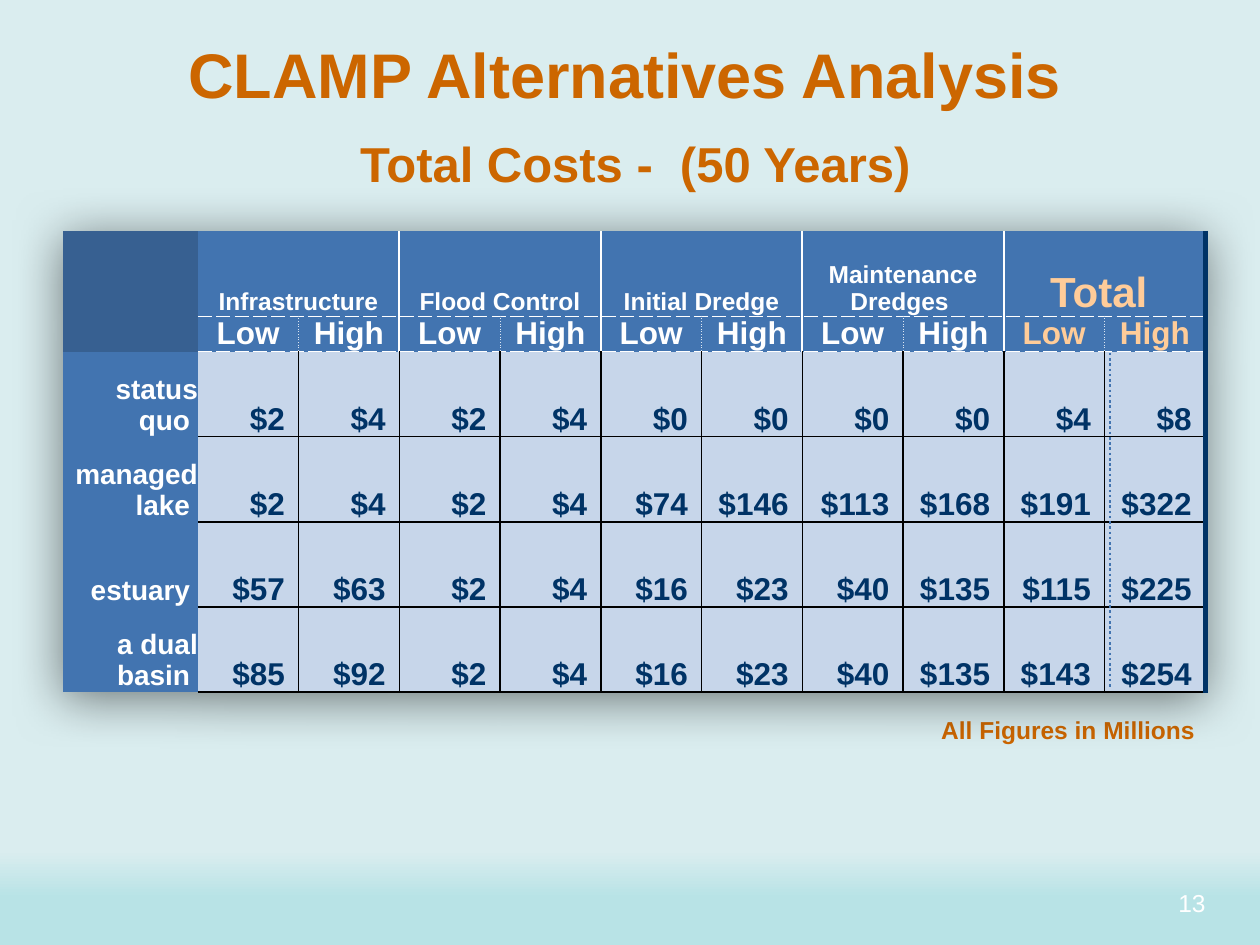
from lxml import etree
from pptx import Presentation, util as u
from pptx.dml.color import RGBColor
from pptx.enum import dml, shapes, text
from pptx.oxml.ns import qn

ORANGE = RGBColor(0xCC, 0x66, 0x00)
PEACH = RGBColor(0xFF, 0xCC, 0x99)
WHITE = RGBColor(0xFF, 0xFF, 0xFF)
BLACK = RGBColor(0, 0, 0)
NAVY = RGBColor(0x00, 0x33, 0x66)
BLUE = RGBColor(0x42, 0x74, 0xB0)
DARK_BLUE = RGBColor(0x37, 0x60, 0x91)
PALE_BLUE = RGBColor(0xC7, 0xD6, 0xEA)
MIST = RGBColor(0xDB, 0xE5, 0xF1)
AQUA = RGBColor(0xB8, 0xE3, 0xE6)
SKY = RGBColor(0xDA, 0xED, 0xEF)

CENTER, RIGHT = text.PP_ALIGN.CENTER, text.PP_ALIGN.RIGHT
TOP, MIDDLE, BOTTOM = (text.MSO_ANCHOR.TOP, text.MSO_ANCHOR.MIDDLE,
                       text.MSO_ANCHOR.BOTTOM)
NO_GRID_STYLE = "{2D5ABB26-0587-4C30-8999-92F81FD0307C}"

GROUPS = ["Infrastructure", "Flood Control", "Initial Dredge",
          "Maintenance Dredges ", "Total "]
COSTS = {
    "status quo ": [2, 4, 2, 4, 0, 0, 0, 0, 4, 8],
    "managed lake ": [2, 4, 2, 4, 74, 146, 113, 168, 191, 322],
    "estuary ": [57, 63, 2, 4, 16, 23, 40, 135, 115, 225],
    "a dual basin ": [85, 92, 2, 4, 16, 23, 40, 135, 143, 254],
}
WHITE_RULE = (WHITE, 1.5, "solid")
DASHED = (WHITE, 0.5, "dash")
DOTTED = (MIST, 0.5, "dot")
BLACK_RULE = (BLACK, 1, "solid")


def grid(n):
    """Length of n grid units; the slide is 120 columns by 90 rows."""
    return u.Inches(n / 12)


class Deck:
    font = "Arial"

    def __init__(self):
        self.prs = Presentation()
        self.prs.slide_width, self.prs.slide_height = grid(120), grid(90)
        self.s = self.prs.slides.add_slide(self.prs.slide_layouts[5])

    def background(self, angle, *stops):
        fill = self.s.background.fill
        fill.gradient()
        fill.gradient_angle = angle
        for stop, (position, color) in zip(fill.gradient_stops, stops):
            stop.position = position
            stop.color.rgb = color

    def add_text(self, tf, words, size, color, align, bold=True):
        p = tf.paragraphs[0]
        p.alignment = align
        r = p.add_run()
        r.text = words
        r.font.name, r.font.size, r.font.bold = self.font, u.Pt(size), bold
        r.font.color.rgb = color

    def place(self, sp, box, anchor):
        sp.left, sp.top, sp.width, sp.height = map(grid, box)
        sp.text_frame.word_wrap = True
        sp.text_frame.auto_size = text.MSO_AUTO_SIZE.NONE
        sp.text_frame.vertical_anchor = anchor

    def title(self, box, *style):
        sp = self.s.shapes.title
        self.place(sp, box, MIDDLE)
        self.add_text(sp.text_frame, *style)

    def label(self, box, *style, anchor=MIDDLE, bold=True):
        sp = self.s.shapes.add_textbox(0, 0, 0, 0)
        self.place(sp, box, anchor)
        self.add_text(sp.text_frame, *style, bold=bold)

    def line(self, x, top, bottom, color, width, dash=None):
        ln = self.s.shapes.add_connector(
            shapes.MSO_CONNECTOR.STRAIGHT, *map(grid, (x, top, x, bottom)))
        ln.line.color.rgb, ln.line.width = color, u.Pt(width)
        if dash:
            ln.line.dash_style = dash
        etree.SubElement(ln._element.spPr, qn("a:effectLst"))

    def table(self, left, top, widths, heights):
        frame = self.s.shapes.add_table(
            len(heights), len(widths),
            *map(grid, (left, top, sum(widths), sum(heights))))
        tbl = frame.table
        tbl.first_row = tbl.horz_banding = False
        for col, width in zip(tbl.columns, widths):
            col.width = grid(width)
        for row, height in zip(tbl.rows, heights):
            row.height = grid(height)
        props = tbl._tbl.tblPr
        props.find(qn("a:tableStyleId")).text = NO_GRID_STYLE
        effects = etree.Element(qn("a:effectLst"))
        shadow = etree.SubElement(
            effects, qn("a:outerShdw"), blurRad=str(u.Inches(0.4)),
            dist=str(u.Inches(0.06)), dir="5400000", algn="ctr", rotWithShape="0")
        color = etree.SubElement(shadow, qn("a:srgbClr"), val=str(BLACK))
        etree.SubElement(color, qn("a:alpha"), val="50000")
        props.insert(0, effects)
        return tbl

    def cell(self, cell, fill, style=None, anchor=BOTTOM, right_inset=0, **borders):
        cell.margin_left = cell.margin_top = cell.margin_bottom = 0
        cell.margin_right = u.Inches(right_inset)
        cell.vertical_anchor = anchor
        props = cell._tc.get_or_add_tcPr()
        for side in "LRTB":
            if borders.get(side):
                color, width, dash = borders[side]
                ln = etree.SubElement(props, qn("a:ln" + side), w=str(u.Pt(width)))
                solid = etree.SubElement(ln, qn("a:solidFill"))
                etree.SubElement(solid, qn("a:srgbClr"), val=str(color))
                etree.SubElement(ln, qn("a:prstDash"), val=dash)
        cell.fill.solid()
        cell.fill.fore_color.rgb = fill
        if style:
            self.add_text(cell.text_frame, *style)
        else:
            p = cell.text_frame.paragraphs[0]
            etree.SubElement(p._p, qn("a:endParaRPr"), sz="1000")


def fill_header(deck, tbl):
    for row in range(2):
        deck.cell(tbl.cell(row, 0), DARK_BLUE)
    last = len(GROUPS) - 1
    for i, group in enumerate(GROUPS):
        low = 1 + 2 * i
        size, color = (24, PEACH) if i == last else (14, WHITE)
        left = WHITE_RULE if i else None
        tbl.cell(0, low).merge(tbl.cell(0, low + 1))
        deck.cell(tbl.cell(0, low), BLUE, (group, size, color, CENTER),
                  L=left, R=WHITE_RULE, B=DASHED)
        deck.cell(tbl.cell(1, low), BLUE, ("Low", 18, color, CENTER), MIDDLE,
                  L=left, R=DOTTED, T=DASHED)
        deck.cell(tbl.cell(1, low + 1), BLUE, ("High", 18, color, CENTER), MIDDLE,
                  L=DOTTED, R=WHITE_RULE if i < last else None, T=DASHED)


def fill_costs(deck, tbl):
    for row, (name, costs) in enumerate(COSTS.items(), 2):
        deck.cell(tbl.cell(row, 0), BLUE, (name, 16, WHITE, RIGHT))
        for col, cost in enumerate(costs, 1):
            deck.cell(tbl.cell(row, col), PALE_BLUE, (f"${cost} ", 18, NAVY, RIGHT),
                      right_inset=0.04, R=BLACK_RULE, B=BLACK_RULE,
                      L=BLACK_RULE if col > 1 else None,
                      T=BLACK_RULE if row > 2 else None)


def main():
    deck = Deck()
    deck.background(90, (0.05, AQUA), (0.10, SKY))
    deck.label((88, 84, 28, 6.25), "13", 14, WHITE, RIGHT, anchor=TOP, bold=False)
    deck.title((5, 11, 111, 9), "Total Costs -  (50 Years)", 28, ORANGE, CENTER)
    deck.label((83, 67, 32, 5), "All Figures in Millions", 14, ORANGE, RIGHT)
    tbl = deck.table(6, 22, [12.84] + [9.6] * 10, [8.1, 3.4] + [8.1] * 4)
    fill_header(deck, tbl)
    fill_costs(deck, tbl)
    deck.line(105.7, 33.6, 65.6, BLUE, 1.5, dml.MSO_LINE.ROUND_DOT)
    deck.line(114.8, 22, 66, NAVY, 2.5)
    deck.label((4, 1, 111, 12), "CLAMP Alternatives Analysis", 36, ORANGE, CENTER)
    deck.prs.save("out.pptx")


if __name__ == "__main__":
    main()
